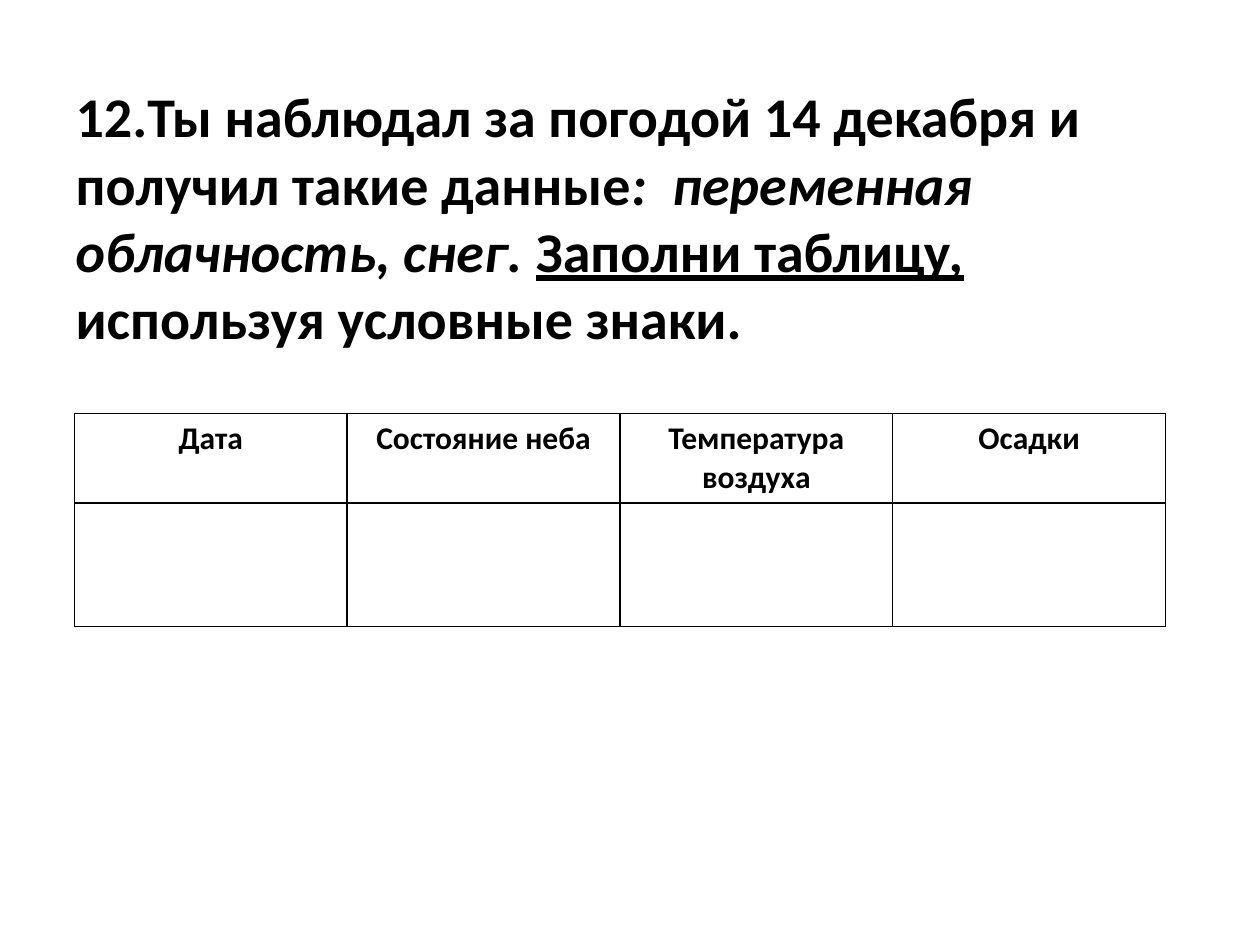
from dataclasses import dataclass, field

from lxml import etree
from pptx import Presentation
from pptx.dml.color import RGBColor
from pptx.enum.text import PP_ALIGN
from pptx.oxml.ns import qn
from pptx.util import Inches, Pt

CENTER = PP_ALIGN.CENTER
COLORS = {"ink": "000000", "paper": "FFFFFF"}
FONT = "Calibri"
TASK_SIZE, HEADER_SIZE = 32, 18
BORDER_POINTS = 1
BORDER_SIDES = ("a:lnL", "a:lnR", "a:lnT", "a:lnB")
ROW_HEIGHTS = (0.71, 0.98)
HEADERS = ("Дата", "Состояние неба", "Температура воздуха", "Осадки")


@dataclass
class Span:
    text: str
    style: dict = field(default_factory=dict)


@dataclass
class Area:
    left: float
    top: float
    width: float
    height: float

    def lengths(self) -> tuple:
        return tuple(Inches(n) for n in (self.left, self.top, self.width, self.height))


TASK_AREA = Area(0.5, 0.6, 9, 2.6)
TABLE_AREA = Area(0.59, 3.28, 8.66, sum(ROW_HEIGHTS))
TASK = (
    Span("12.Ты наблюдал за погодой 14 декабря и получил такие данные"),
    Span(":  переменная облачность, снег. ", {"italic": True}),
    Span("Заполни таблицу,", {"underline": True}),
    Span(" используя условные знаки."),
)


def add_span(para, span: Span, size: int) -> None:
    run = para.add_run()
    run.text = span.text
    style = {"name": FONT, "size": Pt(size), "bold": True, **span.style}
    for name, value in style.items():
        setattr(run.font, name, value)
    run.font.color.rgb = RGBColor.from_string(COLORS["ink"])


def fill_task(body) -> None:
    body.left, body.top, body.width, body.height = TASK_AREA.lengths()
    para = body.text_frame.paragraphs[0]
    properties = para._p.get_or_add_pPr()
    for name in ("marL", "indent"):
        properties.set(name, "0")
    etree.SubElement(properties, qn("a:buNone"))
    for span in TASK:
        add_span(para, span, TASK_SIZE)


def format_cell(cell) -> None:
    properties = cell._tc.get_or_add_tcPr()
    for side in BORDER_SIDES:
        line = etree.SubElement(properties, qn(side), w=str(Pt(BORDER_POINTS)))
        solid = etree.SubElement(line, qn("a:solidFill"))
        etree.SubElement(solid, qn("a:srgbClr"), val=COLORS["ink"])
    cell.fill.background()


def add_weather_table(page) -> None:
    frame = page.shapes.add_table(len(ROW_HEIGHTS), len(HEADERS), *TABLE_AREA.lengths())
    table = frame.table
    table.first_row = table.horz_banding = False
    for column in table.columns:
        column.width = Inches(TABLE_AREA.width / len(HEADERS))
    for row, height in zip(table.rows, ROW_HEIGHTS):
        row.height = Inches(height)
    for cell in table.iter_cells():
        format_cell(cell)
    for index, header in enumerate(HEADERS):
        para = table.cell(0, index).text_frame.paragraphs[0]
        para.alignment = CENTER
        add_span(para, Span(header), HEADER_SIZE)


def main() -> None:
    deck = Presentation()
    deck.slide_width, deck.slide_height = Inches(10), Inches(7.5)
    page = deck.slides.add_slide(deck.slide_layouts[1])
    page.background.fill.solid()
    page.background.fill.fore_color.rgb = RGBColor.from_string(COLORS["paper"])

    # The task fills the body; the title is not needed
    title = page.shapes.title._element
    title.getparent().remove(title)
    fill_task(page.placeholders[1])

    # Weather diary: headers over an empty row
    add_weather_table(page)
    deck.save("out.pptx")


if __name__ == "__main__":
    main()
